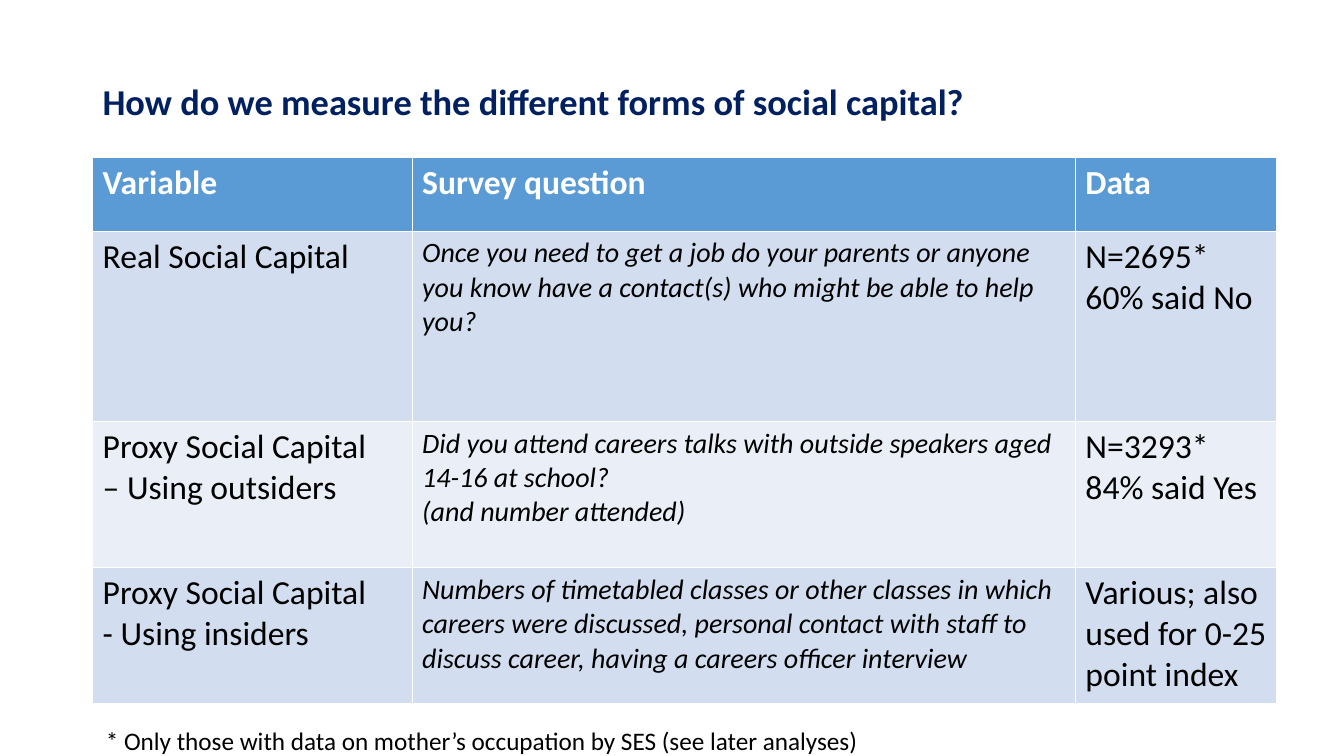
from dataclasses import dataclass

import pptx
import pptx.dml.color
import pptx.enum.text
import pptx.util

Pt = pptx.util.Pt
Anchor = pptx.enum.text.MSO_ANCHOR

FONT = "Calibri"
NAVY, WHITE, BLACK = "002060", "FFFFFF", "000000"
HEADER_FILL = "5B9BD5"
BAND_FILLS = ("D2DEEF", "EAEFF7")

COLUMN_WIDTHS = (228.2, 473.8, 144)
HEADER_HEIGHT = 52.6
HEADERS = ("Variable", "Survey question", "Data")


@dataclass(frozen=True)
class Measure:
    variable: str
    question: str
    data: str
    height: float


MEASURES = (
    Measure(
        "Real Social Capital",
        "Once you need to get a job do your parents or anyone you know "
        "have a contact(s) who might be able to help you?",
        "N=2695*\n60% said No",
        136.1,
    ),
    Measure(
        "Proxy Social Capital\n– Using outsiders",
        "Did you attend careers talks with outside speakers aged 14-16 at school?\n"
        "(and number attended)",
        "N=3293*\n84% said Yes",
        104.4,
    ),
    Measure(
        "Proxy Social Capital\n- Using insiders",
        "Numbers of timetabled classes or other classes in which careers were "
        "discussed, personal contact with staff to discuss career, having a "
        "careers officer interview",
        "Various; also used for 0-25 point index",
        97.2,
    ),
)


def color(value: str) -> pptx.dml.color.RGBColor:
    return pptx.dml.color.RGBColor.from_string(value)


def write(frame, text: str, *, size: float, ink: str = BLACK, bold: bool = False,
          italic: bool = False, line_spacing: float | None = None,
          space_before: float | None = None) -> None:
    """Fill a text frame, one paragraph for each line of text."""
    frame.text = text
    for paragraph in frame.paragraphs:
        if line_spacing is not None:
            paragraph.line_spacing = line_spacing
        if space_before is not None:
            paragraph.space_before = Pt(space_before)
        for run in paragraph.runs:
            font = run.font
            font.name, font.size = FONT, Pt(size)
            font.bold, font.italic = bold, italic
            font.color.rgb = color(ink)


def add_text_frame(slide, left: float, top: float, width: float, height: float):
    shape = slide.shapes.add_textbox(Pt(left), Pt(top), Pt(width), Pt(height))
    shape.text_frame.word_wrap = True
    return shape.text_frame


def fill_cell(cell, fill: str, text: str, **text_format) -> None:
    cell.fill.solid()
    cell.fill.fore_color.rgb = color(fill)
    write(cell.text_frame, text, **text_format)


def add_measures_table(slide) -> None:
    heights = [HEADER_HEIGHT] + [measure.height for measure in MEASURES]
    table = slide.shapes.add_table(
        len(heights), len(COLUMN_WIDTHS), Pt(66.2), Pt(112.5),
        Pt(sum(COLUMN_WIDTHS)), Pt(sum(heights)),
    ).table
    for column, width in zip(table.columns, COLUMN_WIDTHS):
        column.width = Pt(width)
    for row, height in zip(table.rows, heights):
        row.height = Pt(height)

    for column_index, header in enumerate(HEADERS):
        fill_cell(table.cell(0, column_index), HEADER_FILL, header,
                  size=24, ink=WHITE, bold=True)
    for index, measure in enumerate(MEASURES):
        fill = BAND_FILLS[index % len(BAND_FILLS)]
        variable, question, data = table.rows[index + 1].cells
        fill_cell(variable, fill, measure.variable, size=24)
        fill_cell(question, fill, measure.question, size=20, italic=True)
        fill_cell(data, fill, measure.data, size=24)


def main() -> None:
    presentation = pptx.Presentation()
    presentation.slide_width, presentation.slide_height = Pt(960), Pt(540)
    slide = presentation.slides.add_slide(presentation.slide_layouts[6])

    title = add_text_frame(slide, 66.2, 21.6, 828, 104.4)
    title.vertical_anchor = Anchor.MIDDLE
    write(title, "How do we measure the different forms of social capital?",
          size=26, ink=NAVY, bold=True, line_spacing=0.9)

    add_measures_table(slide)

    footnote = add_text_frame(slide, 75.6, 519.8, 677.5, 20.2)
    footnote.margin_left = footnote.margin_right = Pt(0)
    footnote.margin_top = footnote.margin_bottom = Pt(0)
    footnote.auto_size = pptx.enum.text.MSO_AUTO_SIZE.SHAPE_TO_FIT_TEXT
    write(footnote,
          "* Only those with data on mother’s occupation by SES (see later analyses)",
          size=18, line_spacing=0.93, space_before=3)

    presentation.save("out.pptx")


if __name__ == "__main__":
    main()
